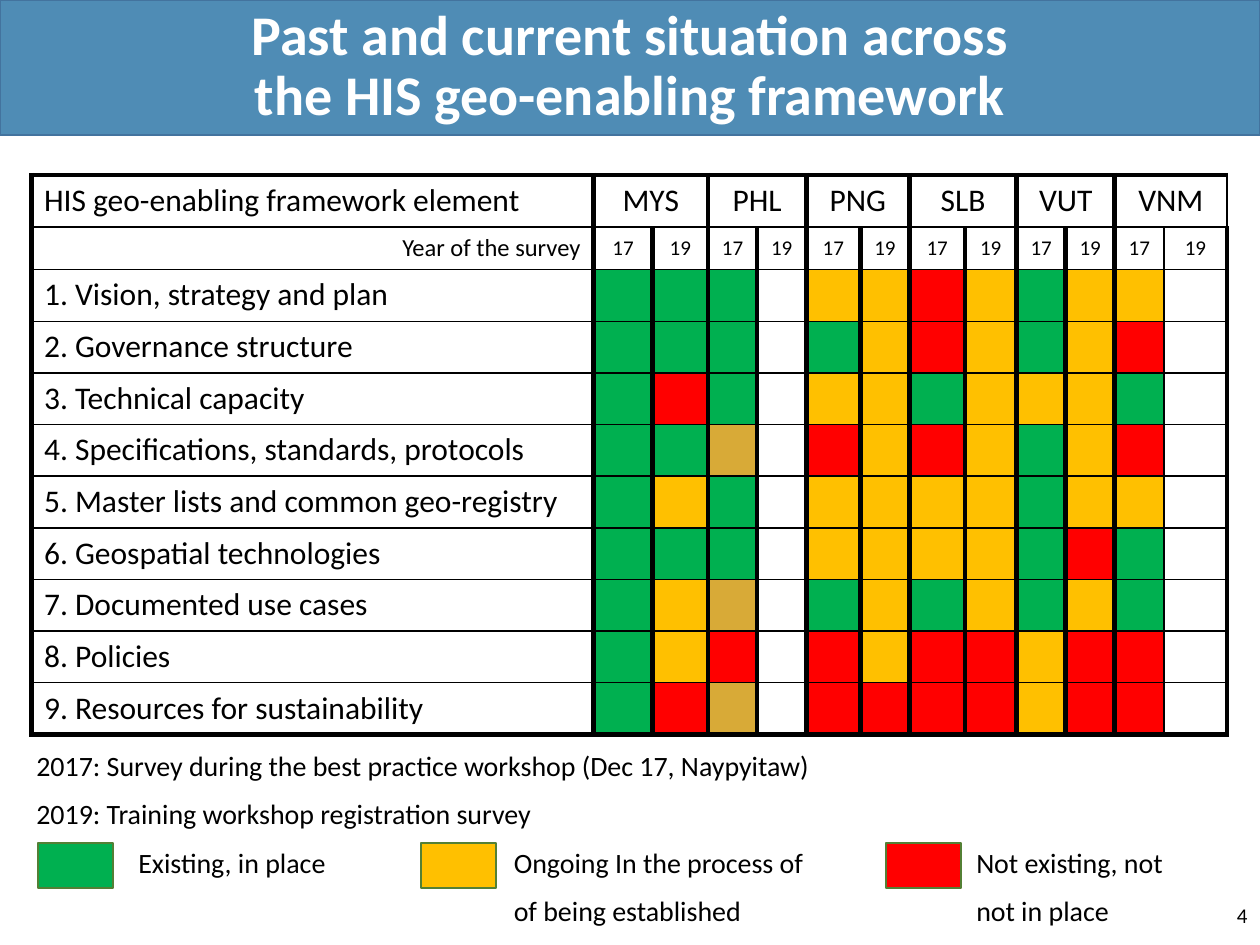
from lxml import etree
from pptx import Presentation
from pptx.dml.color import RGBColor
from pptx.enum.shapes import MSO_SHAPE
from pptx.enum.text import MSO_ANCHOR, MSO_AUTO_SIZE, PP_ALIGN
from pptx.oxml.ns import qn
from pptx.util import Inches, Pt

LEFT, CENTER, RIGHT = PP_ALIGN.LEFT, PP_ALIGN.CENTER, PP_ALIGN.RIGHT
TOP, MIDDLE = MSO_ANCHOR.TOP, MSO_ANCHOR.MIDDLE
RECTANGLE = MSO_SHAPE.RECTANGLE
NO_AUTOFIT = MSO_AUTO_SIZE.NONE
TITLE_ONLY = 5
WIDTH, HEIGHT = 10, 7.5
THIN, THICK = 1, 3

GREEN, AMBER, RED, OCHRE = "00B050", "FFC000", "FF0000", "D8AA37"
STATUS_COLOURS = {"G": GREEN, "A": AMBER, "R": RED, "O": OCHRE, ".": None}
COUNTRIES = ["MYS", "PHL", "PNG", "SLB", "VUT", "VNM"]
YEARS = ["17", "19"]
ELEMENTS = [
    ("1. Vision, strategy and plan", "GGG.AARAGAA."),
    ("2. Governance structure", "GGG.GARAGAR."),
    ("3. Technical capacity", "GRG.AAGAAAG."),
    ("4. Specifications, standards, protocols", "GGO.RARAGAR."),
    ("5. Master lists and common geo-registry", "GAG.AAAAGAA."),
    ("6. Geospatial technologies", "GGG.AAAAGRG."),
    ("7. Documented use cases", "GAO.GAGAGAG."),
    ("8. Policies", "GAR.RARRARR."),
    ("9. Resources for sustainability", "GRO.RRRRARR."),
]
COLUMN_WIDTHS = [4.46, 0.47, 0.44, 0.39, 0.39, 0.43, 0.39,
                 0.44, 0.41, 0.39, 0.39, 0.39, 0.5]
ROW_HEIGHTS = [0.41, 0.34] + [0.41] * len(ELEMENTS)
LEGEND = [
    (0.3, 0.7, GREEN, ["Existing, in place"]),
    (3.34, 0.64, AMBER, ["Ongoing In the process of", "of being established"]),
    (7.03, 0.62, RED, ["Not existing, not", "not in place"]),
]
NOTES = ["2017: Survey during the best practice workshop (Dec 17, Naypyitaw)",
         "2019: Training workshop registration survey"]


def colour(hex_code):
    """Turn a hex string into a colour."""
    return RGBColor.from_string(hex_code)


def write(frame, lines, size=18, ink="000000", bold=False, align=LEFT,
          spacing=1.0, before=0):
    """Write lines as formatted paragraphs in a text frame."""
    for index, line in enumerate(lines):
        paragraph = frame.add_paragraph() if index else frame.paragraphs[0]
        paragraph.alignment = align
        paragraph.line_spacing = spacing
        paragraph.space_before = Pt(before)
        run = paragraph.add_run()
        run.text = line
        run.font.name = "Calibri"
        run.font.size = Pt(size)
        run.font.bold = bold
        run.font.color.rgb = colour(ink)


def add_text(slide, box, lines, anchor=TOP, **text_format):
    """Add a wrapped text box."""
    frame = slide.shapes.add_textbox(*map(Inches, box)).text_frame
    frame.word_wrap = True
    frame.vertical_anchor = anchor
    write(frame, lines, **text_format)


def add_rectangle(slide, box, fill, outline):
    """Add a flat outlined rectangle."""
    rectangle = slide.shapes.add_shape(RECTANGLE, *map(Inches, box))
    rectangle.shadow.inherit = False
    rectangle.fill.solid()
    rectangle.fill.fore_color.rgb = colour(fill)
    rectangle.line.color.rgb = colour(outline)
    rectangle.line.width = Pt(1)
    return rectangle


def add_banner(slide, box, lines):
    """Place the title over a full-width band."""
    left, top, width, height = box
    band = add_rectangle(slide, box, "4F8CB5", "43739E")
    slide.shapes._spTree.insert(2, band._element)
    title = slide.shapes.title
    title.left, title.width = Inches(left + width * 0.07), Inches(width * 0.86)
    title.top, title.height = Inches(top + height * 0.15), Inches(height * 0.7)
    title.text_frame.auto_size = NO_AUTOFIT
    title.text_frame.vertical_anchor = MIDDLE
    write(title.text_frame, lines, size=32, ink="FFFFFF", bold=True,
          align=CENTER, spacing=0.9)


def style_cell(cell, fill, **borders):
    """Set a cell's fill and its black borders, given in points by side."""
    if fill:
        cell.fill.solid()
        cell.fill.fore_color.rgb = colour(fill)
    else:
        cell.fill.background()
    properties = cell._tc.get_or_add_tcPr()
    for position, side in enumerate("LRTB"):
        line = etree.Element(qn(f"a:ln{side}"), w=str(Pt(borders[side])))
        solid = etree.SubElement(line, qn("a:solidFill"))
        etree.SubElement(solid, qn("a:srgbClr"), val="000000")
        properties.insert(position, line)


def add_status_table(slide, left, top):
    """Add the table of framework elements by country and survey year."""
    row_count, column_count = len(ROW_HEIGHTS), len(COLUMN_WIDTHS)
    table = slide.shapes.add_table(
        row_count, column_count, Inches(left), Inches(top),
        Inches(sum(COLUMN_WIDTHS)), Inches(sum(ROW_HEIGHTS))).table
    table.first_row = table.horz_banding = False
    for column, width in zip(table.columns, COLUMN_WIDTHS):
        column.width = Inches(width)
    for row, height in zip(table.rows, ROW_HEIGHTS):
        row.height = Inches(height)

    statuses = ["." * (column_count - 1)] * 2 + [codes for _, codes in ELEMENTS]
    thin_edge = column_count - 1
    for r, codes in enumerate(statuses):
        for c, code in enumerate("." + codes):
            style_cell(table.cell(r, c), STATUS_COLOURS[code],
                       L=THIN if c == thin_edge else THICK,
                       R=THIN if c == thin_edge - 1 else THICK,
                       T=THIN if r else THICK,
                       B=THICK if r == row_count - 1 else THIN)

    write(table.cell(0, 0).text_frame, ["HIS geo-enabling framework element"])
    write(table.cell(1, 0).text_frame, ["Year of the survey"], size=14, align=RIGHT)
    for r, (element, _) in enumerate(ELEMENTS, start=2):
        write(table.cell(r, 0).text_frame, [element])
    for index, country in enumerate(COUNTRIES):
        first = 1 + index * len(YEARS)
        heading = table.cell(0, first)
        heading.merge(table.cell(0, first + 1))
        write(heading.text_frame, [country], align=CENTER)
        for offset, year in enumerate(YEARS):
            year_cell = table.cell(1, first + offset)
            year_cell.vertical_anchor = MIDDLE
            write(year_cell.text_frame, [year], size=12, align=CENTER)


def add_legend(slide, top):
    """Add a colour swatch and its meaning for each status."""
    for left, label_offset, fill, meaning in LEGEND:
        add_rectangle(slide, (left, top, 0.6, 0.36), fill, "538035")
        add_text(slide, (left + label_offset, top, 2.6, 0.71), meaning,
                 size=16, spacing=0.9, before=10)


def main():
    """Build and save the slide."""
    deck = Presentation()
    deck.slide_width, deck.slide_height = Inches(WIDTH), Inches(HEIGHT)
    slide = deck.slides.add_slide(deck.slide_layouts[TITLE_ONLY])
    add_banner(slide, (0, 0, WIDTH, 1.07),
               ["Past and current situation across",
                "the HIS geo-enabling framework"])
    add_status_table(slide, WIDTH * 0.025, 1.39)
    add_text(slide, (0.19, 5.92, 9.35, 0.71), NOTES,
             size=16, spacing=0.9, before=10)
    add_legend(slide, 6.69)
    add_text(slide, (WIDTH - 2.25, 7.06, 2.25, 0.4), ["4"],
             anchor=MIDDLE, size=12, align=RIGHT)
    deck.save("out.pptx")


if __name__ == "__main__":
    main()
